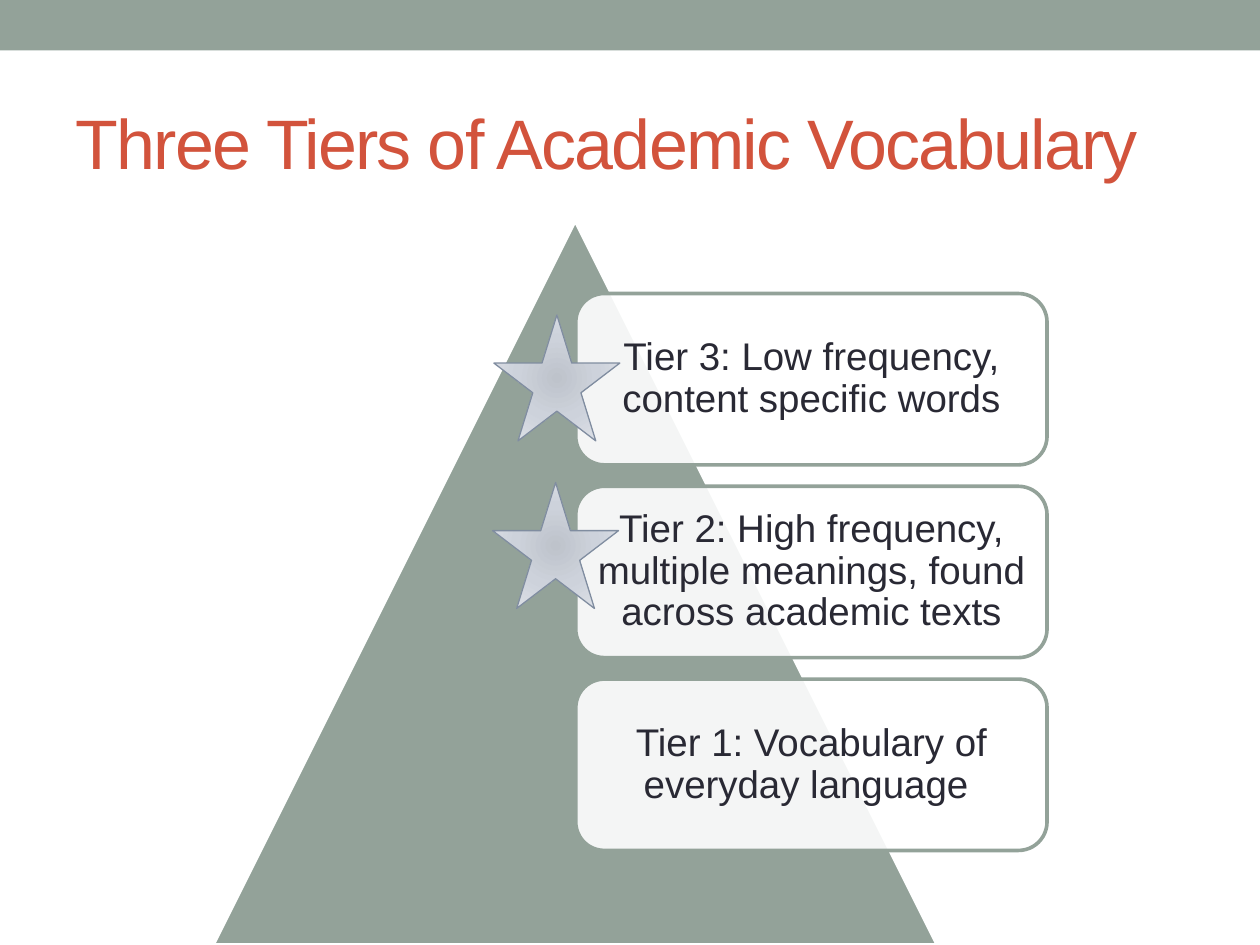
from pptx import Presentation
from pptx.dml.color import RGBColor
from pptx.enum.shapes import MSO_SHAPE
from pptx.enum.text import MSO_ANCHOR, PP_ALIGN
from pptx.oxml import parse_xml
from pptx.oxml.ns import nsdecls, qn
from pptx.util import Inches, Pt

SAGE = RGBColor(0x93, 0xA2, 0x99)
RED = RGBColor(0xD2, 0x53, 0x3C)
INK = RGBColor(0x29, 0x29, 0x34)
WHITE = RGBColor(0xFF, 0xFF, 0xFF)
STEEL = RGBColor(0x80, 0x8D, 0xA0)
STAR_STOPS = [
    (0, RGBColor(0xBE, 0xC3, 0xCB)),
    (45, RGBColor(0xCD, 0xD2, 0xDB)),
    (100, RGBColor(0xE3, 0xE6, 0xEB)),
]

COLS, ROWS = 40, 30
TIERS = [
    "Tier 3: Low frequency, content specific words",
    "Tier 2: High frequency, multiple meanings, found across academic texts",
    "Tier 1: Vocabulary of everyday language ",
]
TIER_TOP, TIER_HEIGHT, TIER_PITCH = 9.32, 5.44, 6.12
STARS = [(15.68, 10), (15.64, 15.32)]


class Deck:
    """Style and current slide; places are columns and rows of the grid."""

    font = "Arial"
    outline = 2.08

    def __init__(self):
        self.prs = Presentation()
        self.prs.slide_width, self.prs.slide_height = Inches(10), Inches(7.5)
        self.s = self.prs.slides.add_slide(self.prs.slide_layouts[5])

    def box(self, col, row, cols, rows):
        x, y = self.prs.slide_width / COLS, self.prs.slide_height / ROWS
        return [int(v) for v in (col * x, row * y, cols * x, rows * y)]

    def shape(self, kind, place, fill=None, line=None, width=outline):
        sp = self.s.shapes.add_shape(kind, *self.box(*place))
        sp.shadow.inherit = False
        if fill is not None:
            sp.fill.solid()
            sp.fill.fore_color.rgb = fill
        if line is None:
            sp.line.fill.background()
        else:
            sp.line.color.rgb = line
            sp.line.width = Pt(width)
        return sp

    def run(self, p, text, size, color):
        r = p.add_run()
        r.text = text
        r.font.name, r.font.size = self.font, Pt(size)
        r.font.color.rgb = color
        return r

    def title(self, text, place):
        sp = self.s.shapes.title
        sp.left, sp.top, sp.width, sp.height = self.box(*place)
        tf = sp.text_frame
        tf.word_wrap = True
        tf.vertical_anchor = MSO_ANCHOR.MIDDLE
        p = tf.paragraphs[0]
        p.alignment = PP_ALIGN.LEFT
        r = self.run(p, text, 40, RED)
        r.font._element.set("spc", "-100")

    def tier(self, text, place):
        sp = self.shape(MSO_SHAPE.ROUNDED_RECTANGLE, place, WHITE, SAGE)
        color = sp._element.spPr.find(qn("a:solidFill"))[0]
        color.append(parse_xml(f'<a:alpha {nsdecls("a")} val="90000"/>'))
        tf = sp.text_frame
        tf.word_wrap = True
        tf.vertical_anchor = MSO_ANCHOR.MIDDLE
        tf.margin_left = tf.margin_right = Inches(0.09)
        tf.margin_top = tf.margin_bottom = Inches(0.09)
        p = tf.paragraphs[0]
        p.alignment = PP_ALIGN.CENTER
        p.line_spacing = 0.9
        self.run(p, text, 22, INK)

    def star(self, col, row):
        """Five-pointed star with a radial gradient."""
        sp = self.shape(MSO_SHAPE.STAR_5_POINT, (col, row, 4, 4),
                        line=STEEL, width=0.75)
        stops = "".join(
            f'<a:gs pos="{pos * 1000}"><a:srgbClr val="{color}"/></a:gs>'
            for pos, color in STAR_STOPS)
        sp._element.spPr.find(qn("a:prstGeom")).addnext(parse_xml(
            f'<a:gradFill {nsdecls("a")}><a:gsLst>{stops}</a:gsLst>'
            '<a:path path="circle"><a:fillToRect l="100000" t="100000" '
            'r="100000" b="100000"/></a:path></a:gradFill>'))


def main():
    deck = Deck()
    deck.shape(MSO_SHAPE.RECTANGLE, (0, 0, COLS, 1.6), SAGE)
    deck.title("Three Tiers of Academic Vocabulary", (2, 2.32, 36, 4.32))
    deck.shape(MSO_SHAPE.ISOSCELES_TRIANGLE, (6.76, 7, 23, 23), SAGE, WHITE)
    for i, text in enumerate(TIERS):
        deck.tier(text, (18.28, TIER_TOP + i * TIER_PITCH, 14.96, TIER_HEIGHT))
    for col, row in STARS:
        deck.star(col, row)
    deck.prs.save("out.pptx")


if __name__ == "__main__":
    main()
